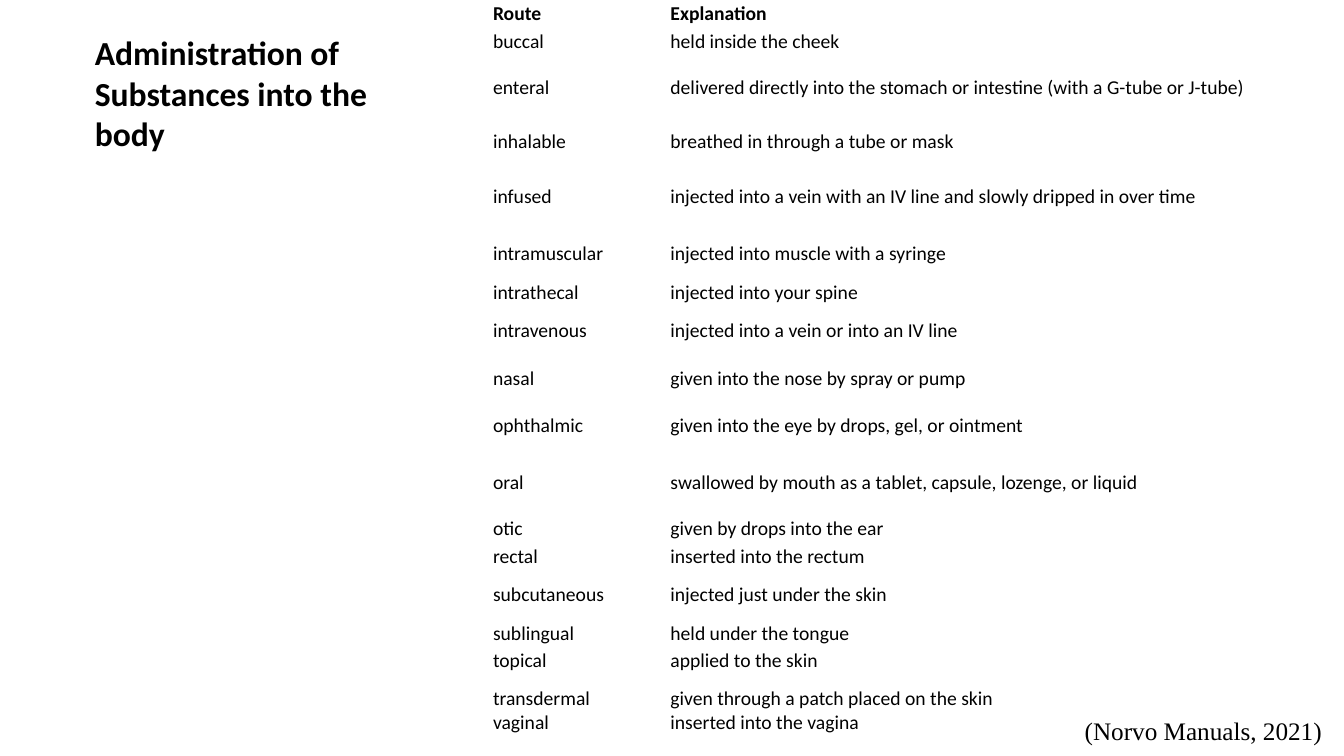
from pptx import Presentation
from pptx.dml.color import RGBColor
from pptx.enum.text import MSO_ANCHOR, MSO_AUTO_SIZE, PP_ALIGN
from pptx.util import Inches, Pt

ROUTES = [
    ("Route", "Explanation", 0.27),
    ("buccal", "held inside the cheek", 0.27),
    ("enteral", "delivered directly into the stomach or intestine (with a G-tube or J-tube)", 0.64),
    ("inhalable", "breathed in through a tube or mask", 0.45),
    ("infused", "injected into a vein with an IV line and slowly dripped in over time", 0.64),
    ("intramuscular", "injected into muscle with a syringe", 0.49),
    ("intrathecal", "injected into your spine", 0.27),
    ("intravenous", "injected into a vein or into an IV line", 0.49),
    ("nasal", "given into the nose by spray or pump", 0.45),
    ("ophthalmic", "given into the eye by drops, gel, or ointment", 0.49),
    ("oral", "swallowed by mouth as a tablet, capsule, lozenge, or liquid", 0.64),
    ("otic", "given by drops into the ear", 0.27),
    ("rectal", "inserted into the rectum", 0.27),
    ("subcutaneous", "injected just under the skin", 0.49),
    ("sublingual", "held under the tongue", 0.27),
    ("topical", "applied to the skin", 0.27),
    ("transdermal\nvaginal", "given through a patch placed on the skin\ninserted into the vagina", 0.72),
]
COLUMN_WIDTHS = (1.76, 7.92)


def color(hex_value):
    return RGBColor.from_string(hex_value)


def apply(target, values):
    """Set each named attribute of target."""
    for name, value in values.items():
        setattr(target, name, value)


class SlideBuilder:
    ink = "000000"
    body_font = "Calibri"
    citation_font = "Times New Roman"
    cell_format = {
        "vertical_anchor": MSO_ANCHOR.MIDDLE,
        "margin_left": Inches(0.04),
        "margin_right": Inches(0.04),
        "margin_top": Inches(0.02),
        "margin_bottom": Inches(0.02),
    }

    def __init__(self, slide):
        self.slide = slide

    def fill_text(self, frame, text, size, font, bold=False):
        frame.text = text
        for paragraph in frame.paragraphs:
            paragraph.alignment = PP_ALIGN.LEFT
            for run in paragraph.runs:
                apply(run.font, {"name": font, "size": Pt(size), "bold": bold})
                run.font.color.rgb = color(self.ink)

    def title(self, text, left, top, width, height):
        heading = self.slide.shapes.title
        apply(heading, {"left": Inches(left), "top": Inches(top),
                        "width": Inches(width), "height": Inches(height)})
        apply(heading.text_frame, {"word_wrap": True, "vertical_anchor": MSO_ANCHOR.TOP,
                                   "auto_size": MSO_AUTO_SIZE.SHAPE_TO_FIT_TEXT})
        self.fill_text(heading.text_frame, text, 24, self.body_font, bold=True)

    def table(self, rows, widths, left, top):
        height = sum(row_height for *_, row_height in rows)
        grid = self.slide.shapes.add_table(
            len(rows), len(widths), Inches(left), Inches(top),
            Inches(sum(widths)), Inches(height)).table
        apply(grid, {"first_row": False, "horz_banding": False})
        for column, width in zip(grid.columns, widths):
            column.width = Inches(width)
        for index, (*texts, row_height) in enumerate(rows):
            grid.rows[index].height = Inches(row_height)
            for cell, text in zip(grid.rows[index].cells, texts):
                apply(cell, self.cell_format)
                cell.fill.background()
                self.fill_text(cell.text_frame, text, 14, self.body_font, bold=index == 0)

    def citation(self, text, left, top, width, height):
        source = self.slide.shapes.add_textbox(
            Inches(left), Inches(top), Inches(width), Inches(height))
        apply(source.text_frame, {"word_wrap": False, "vertical_anchor": MSO_ANCHOR.MIDDLE,
                                  "auto_size": MSO_AUTO_SIZE.SHAPE_TO_FIT_TEXT})
        self.fill_text(source.text_frame, text, 18, self.citation_font)


def main():
    presentation = Presentation()
    apply(presentation, {"slide_width": Inches(13.33), "slide_height": Inches(7.5)})
    title_only = presentation.slide_layouts.get_by_name("Title Only")
    builder = SlideBuilder(presentation.slides.add_slide(title_only))
    builder.table(ROUTES, COLUMN_WIDTHS, 4.85, 0)
    builder.citation("(Norvo Manuals, 2021)", 10.66, 7, 13.33, 0.5)
    builder.title("Administration of Substances into the body", 0.84, 0.27, 3.45, 1.31)
    presentation.save("out.pptx")


if __name__ == "__main__":
    main()
